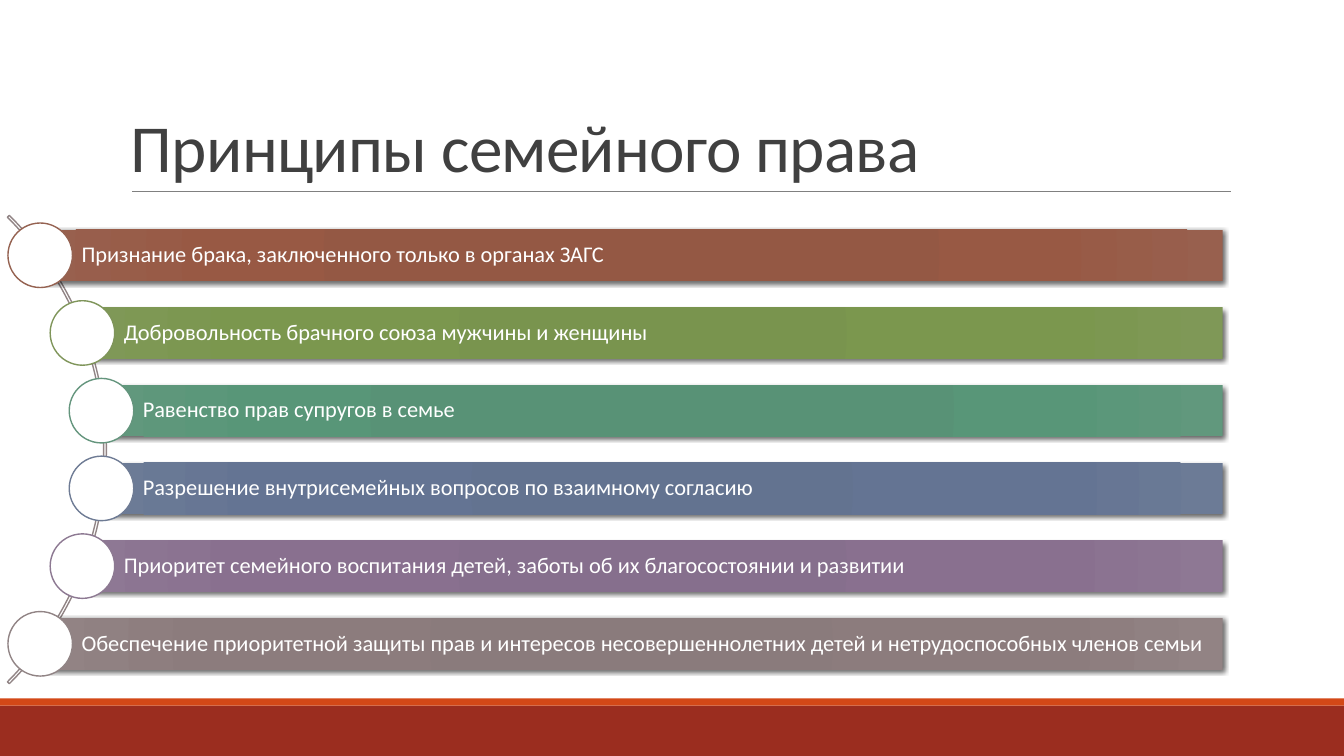
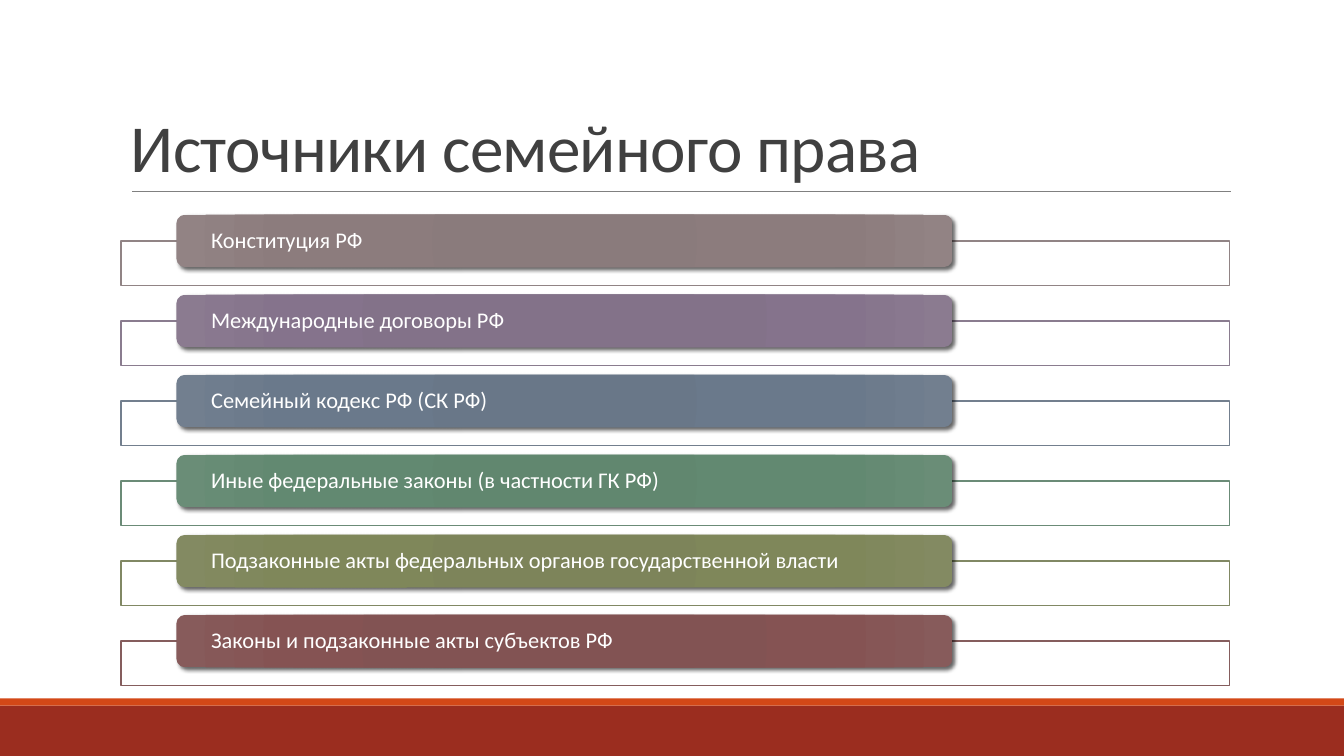
from math import sqrt

from lxml.etree import SubElement
from pptx import Presentation
from pptx.dml.color import RGBColor
from pptx.enum.shapes import MSO_CONNECTOR, MSO_SHAPE
from pptx.enum.text import MSO_ANCHOR, PP_ALIGN
from pptx.oxml.ns import qn
from pptx.util import Inches, Pt

# The grid: 133.33 columns by 75 rows of one tenth of an inch
COLUMNS, ROWS = 133.33, 75
CELL = 0.1
GRADIENT_STOPS = (0, 34, 70, 100)


def cells(count):
    return Inches(count * CELL)


def colour(code):
    return RGBColor.from_string(code)


class Board:
    """Holds the style of the deck and the slide being drawn."""

    font = "Calibri"
    white, title_ink, rule = "FFFFFF", "404040", "808080"
    band, band_edge = "9B2D1F", "D34817"

    def __init__(self):
        self.deck = Presentation()
        self.deck.slide_width, self.deck.slide_height = cells(COLUMNS), cells(ROWS)
        self.slide = None

    def page(self, title):
        """Start a slide with the shared bands, rule and title."""
        self.slide = self.deck.slides.add_slide(self.deck.slide_layouts[6])
        self.shape(MSO_SHAPE.RECTANGLE, 0, 70, COLUMNS, 5, fill=self.band)
        self.shape(MSO_SHAPE.RECTANGLE, 0, 69.3, COLUMNS, 0.7, fill=self.band_edge)
        self.line(13.1, 19, 122.1, 19)
        box = self.slide.shapes.add_textbox(*map(cells, (12, 3.1, 110, 15.9)))
        span = self.text(box, title, 48, self.title_ink, MSO_ANCHOR.BOTTOM, 0.85)
        span.font._element.set("spc", "-50")

    def line(self, x1, y1, x2, y2):
        rule = self.slide.shapes.add_connector(
            MSO_CONNECTOR.STRAIGHT, *map(cells, (x1, y1, x2, y2)))
        rule.line.color.rgb = colour(self.rule)
        rule.line.width = Pt(0.5)
        SubElement(rule._element.spPr, qn("a:effectLst"))

    def shape(self, kind, left, top, width, height, fill=None, outline=None):
        shape = self.slide.shapes.add_shape(
            kind, *map(cells, (left, top, width, height)))
        shape.shadow.inherit = False
        if fill:
            shape.fill.solid()
            shape.fill.fore_color.rgb = colour(fill)
        else:
            shape.fill.background()
        if outline:
            shape.line.color.rgb = colour(outline)
            shape.line.width = Pt(1)
        else:
            shape.line.fill.background()
        return shape

    def bar(self, kind, left, top, width, height, shades, caption, inset):
        """A shaded bar with a shadow and a caption."""
        bar = self.shape(kind, left, top, width, height)
        self.shade(bar, shades)
        self.cast_shadow(bar)
        self.text(bar, caption, 16, self.white, MSO_ANCHOR.MIDDLE, 0.9)
        frame = bar.text_frame
        frame.margin_left = cells(inset)
        frame.margin_right = frame.margin_top = frame.margin_bottom = cells(0.4)

    def shade(self, shape, shades):
        shape.fill.gradient()
        gradient = shape._element.spPr.find(qn("a:gradFill"))
        for child in list(gradient):
            gradient.remove(child)
        stops = SubElement(gradient, qn("a:gsLst"))
        for position, code in zip(GRADIENT_STOPS, shades):
            stop = SubElement(stops, qn("a:gs"), pos=str(position * 1000))
            SubElement(stop, qn("a:srgbClr"), val=code)
        circle = SubElement(gradient, qn("a:path"), {"path": "circle"})
        SubElement(circle, qn("a:fillToRect"), {side: "100000" for side in "ltrb"})

    def cast_shadow(self, shape):
        effects = shape._element.spPr.find(qn("a:effectLst"))
        shadow = SubElement(effects, qn("a:outerShdw"), blurRad=str(Pt(3)),
                            dist=str(Pt(2)), dir="2700000", rotWithShape="0")
        black = SubElement(shadow, qn("a:srgbClr"), val="000000")
        SubElement(black, qn("a:alpha"), val="60000")

    def text(self, box, words, size, ink, anchor, spacing):
        frame = box.text_frame
        frame.text = words
        frame.word_wrap = True
        frame.vertical_anchor = anchor
        para = frame.paragraphs[0]
        para.alignment = PP_ALIGN.LEFT
        para.line_spacing = spacing
        span = para.runs[0]
        span.font.name, span.font.size = self.font, Pt(size)
        span.font.color.rgb = colour(ink)
        return span


# Caption, outline, gradient shades
GREY = ("918485", ("89797A", "8A7B7C", "8C7C7D", "928384"))
PRINCIPLES = [
    ("Признание брака, заключенного только в органах ЗАГС",
     "956251", ("945742", "945844", "985944", "98604E")),
    ("Добровольность брачного союза мужчины и женщины",
     "7F955A", ("78934C", "79944E", "7B974E", "7F9857")),
    ("Равенство прав супругов в семье",
     "64957D", ("569275", "589276", "589678", "61987D")),
    ("Разрешение внутрисемейных вопросов по взаимному согласию",
     "6E7B94", ("61718F", "637390", "647493", "6C7B96")),
    ("Приоритет семейного воспитания детей, заботы об их благосостоянии и развитии",
     "8D7992", ("856D8C", "866F8D", "89708F", "8E7894")),
    ("Обеспечение приоритетной защиты прав и интересов несовершеннолетних детей "
     "и нетрудоспособных членов семьи", *GREY),
]
SOURCES = [
    ("Конституция РФ", *GREY),
    ("Международные договоры РФ",
     "8A7C8F", ("827188", "837289", "85738C", "8B7B90")),
    ("Семейный кодекс РФ (СК РФ)",
     "737F8E", ("687688", "697788", "6A798B", "727F8F")),
    ("Иные федеральные законы (в частности ГК РФ)",
     "6B8B77", ("60866E", "61876F", "628971", "6A8D77")),
    ("Подзаконные акты федеральных органов государственной власти",
     "818864", ("7C8458", "7D845A", "7F875A", "838A62")),
    ("Законы и подзаконные акты субъектов РФ",
     "855D5D", ("825151", "825353", "855353", "875B5B")),
]


def principles_page(board):
    """Bars whose discs sit on a large arc."""
    board.page("Принципы семейного права")
    centre_x, centre_y, radius, orbit = -22.3, 44.6, 32.85, 32.6
    pitch, bar_height, disc, right = 7.71, 5.1, 6.4, 121.3
    arc = board.shape(MSO_SHAPE.BLOCK_ARC, centre_x - radius, centre_y - radius,
                      2 * radius, 2 * radius, outline=GREY[0])
    for index, value in enumerate((189, 27, 0.004)):
        arc.adjustments[index] = value
    middle = (len(PRINCIPLES) - 1) / 2
    for index, (caption, outline, shades) in enumerate(PRINCIPLES):
        rise = (index - middle) * pitch
        x, y = centre_x + sqrt(orbit ** 2 - rise ** 2), centre_y + rise
        board.bar(MSO_SHAPE.RECTANGLE, x, y - bar_height / 2, right - x, bar_height,
                  shades, caption, inset=4.1)
        board.shape(MSO_SHAPE.OVAL, x - disc / 2, y - disc / 2, disc, disc,
                    fill=board.white, outline=outline)


def sources_page(board):
    """Rounded labels over outlined frames."""
    board.page("Источники семейного права")
    top, pitch = 21.3, 7.94
    for index, (caption, outline, shades) in enumerate(SOURCES):
        y = top + index * pitch
        board.shape(MSO_SHAPE.RECTANGLE, 12, y + 2.6, 110, 4.4,
                    fill=board.white, outline=outline)
        board.bar(MSO_SHAPE.ROUNDED_RECTANGLE, 17.5, y, 77, 5.2,
                  shades, caption, inset=3.2)


def main():
    board = Board()
    principles_page(board)
    sources_page(board)
    board.deck.save("out.pptx")


if __name__ == "__main__":
    main()
